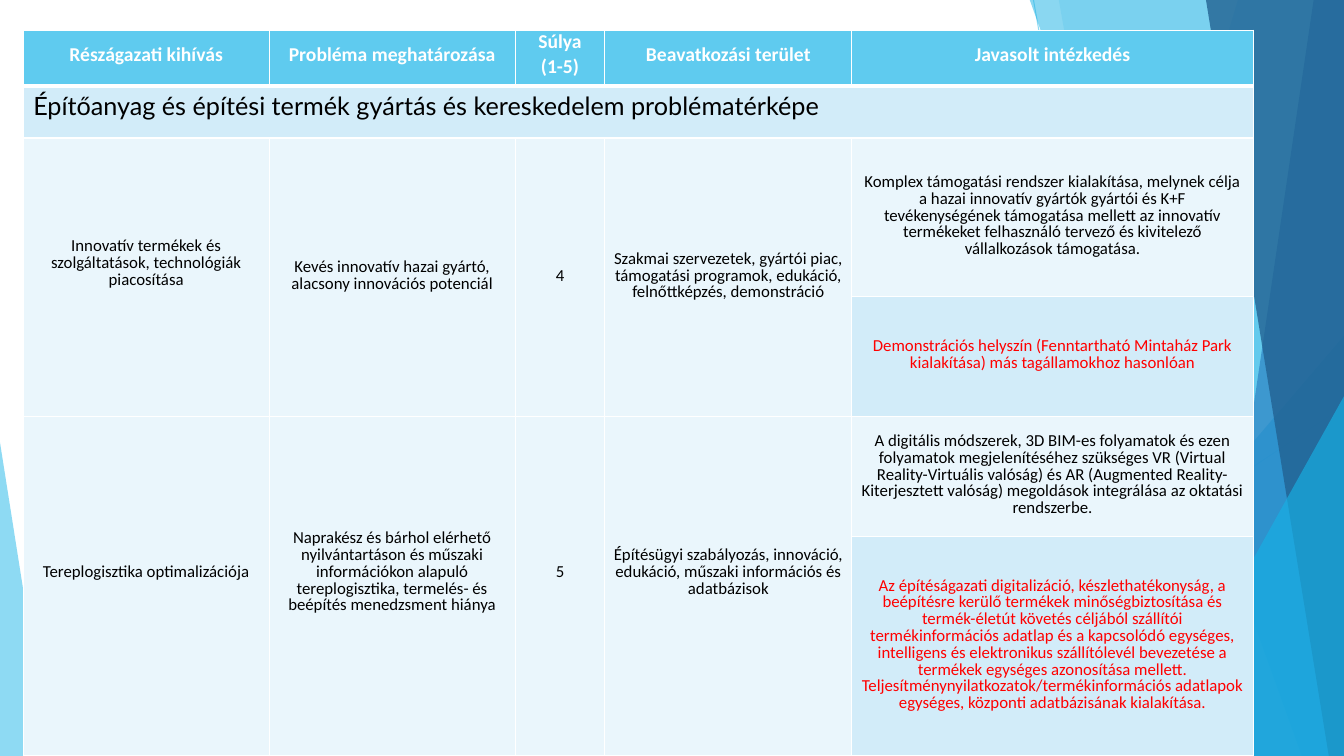
from lxml import etree
from pptx import Presentation
from pptx.dml.color import RGBColor
from pptx.enum.shapes import MSO_CONNECTOR, MSO_SHAPE
from pptx.enum.text import MSO_ANCHOR, PP_ALIGN
from pptx.oxml.ns import qn
from pptx.util import Inches, Pt

STRAIGHT = MSO_CONNECTOR.STRAIGHT
TRIANGLE = MSO_SHAPE.ISOSCELES_TRIANGLE
MIDDLE, CENTER, LEFT = MSO_ANCHOR.MIDDLE, PP_ALIGN.CENTER, PP_ALIGN.LEFT

SKY = RGBColor(0x5F, 0xCB, 0xEF)
CYAN = RGBColor(0x17, 0xB0, 0xE4)
BLUE = RGBColor(0x2E, 0x83, 0xC3)
NAVY = RGBColor(0x22, 0x62, 0x92)
BAND = RGBColor(0xD2, 0xEC, 0xF9)
PALE = RGBColor(0xEA, 0xF6, 0xFC)
WHITE = RGBColor(0xFF, 0xFF, 0xFF)
BLACK = RGBColor(0, 0, 0)
RED = RGBColor(0xFF, 0, 0)

WIDTH, HEIGHT, TOP = 13.33, 7.5, -0.01
COLUMNS = [2.44, 2.44, 0.89, 2.45, 3.98]
ROWS = [0.55, 0.52, 1.57, 1.19, 1.19, 2.18]
LIFT = 0.25  # bottom margin that raises centred text by half a line

HEADERS = [
    ["Részágazati kihívás"],
    ["Probléma meghatározása"],
    ["Súlya", "(1-5)"],
    ["Beavatkozási terület"],
    ["Javasolt intézkedés"],
]
TITLE = "Építőanyag és építési termék gyártás és kereskedelem problématérképe"

# Each challenge: texts and bottom margins of the four merged cells, then two measures
CHALLENGES = [
    (
        [
            "Innovatív termékek és szolgáltatások, technológiák piacosítása",
            "Kevés innovatív hazai gyártó, alacsony innovációs potenciál",
            "4",
            "Szakmai szervezetek, gyártói piac, támogatási programok, edukáció, "
            "felnőttképzés, demonstráció",
        ],
        [LIFT, 0, 0, 0],
        "Komplex támogatási rendszer kialakítása, melynek célja a hazai innovatív gyártók "
        "gyártói és K+F tevékenységének támogatása mellett az innovatív termékeket "
        "felhasználó tervező és kivitelező vállalkozások támogatása.",
        "Demonstrációs helyszín (Fenntartható Mintaház Park kialakítása) más "
        "tagállamokhoz hasonlóan",
    ),
    (
        [
            "Tereplogisztika optimalizációja",
            "Naprakész és bárhol elérhető nyilvántartáson és műszaki információkon alapuló "
            "tereplogisztika, termelés- és beépítés menedzsment hiánya",
            "5",
            "Építésügyi szabályozás, innováció, edukáció, műszaki információs és adatbázisok",
        ],
        [LIFT] * 4,
        "A digitális módszerek, 3D BIM-es folyamatok és ezen folyamatok megjelenítéséhez "
        "szükséges VR (Virtual Reality-Virtuális valóság) és AR (Augmented "
        "Reality-Kiterjesztett valóság) megoldások integrálása az oktatási rendszerbe.",
        "Az építéságazati digitalizáció, készlethatékonyság, a beépítésre kerülő termékek "
        "minőségbiztosítása és termék-életút követés céljából szállítói "
        "termékinformációs adatlap és a kapcsolódó egységes, intelligens és elektronikus "
        "szállítólevél bevezetése a termékek egységes azonosítása mellett. "
        "Teljesítménynyilatkozatok/termékinformációs adatlapok egységes, központi "
        "adatbázisának kialakítása.",
    ),
]


class SlideBuilder:
    def __init__(self, slide, font):
        self.shapes = slide.shapes
        self.font = font

    def set_alpha(self, element, percent):
        color = element.find(".//" + qn("a:srgbClr"))
        etree.SubElement(color, qn("a:alpha"), val=str(percent * 1000))

    def paint(self, shape, color, opacity):
        shape.shadow.inherit = False
        shape.fill.solid()
        shape.fill.fore_color.rgb = color
        shape.line.fill.background()
        self.set_alpha(shape._element.spPr, opacity)

    def line(self, x1, y1, x2, y2, color, opacity):
        line = self.shapes.add_connector(
            STRAIGHT, Inches(x1), Inches(y1), Inches(x2), Inches(y2))
        line.line.color.rgb = color
        line.line.width = Pt(0.75)
        properties = line._element.spPr
        self.set_alpha(properties, opacity)
        etree.SubElement(properties, qn("a:effectLst"))

    def shard(self, top_x, bottom_x, color, opacity):
        """Fill everything from a slanted edge to the right side of the slide."""
        corners = [(WIDTH, TOP), (WIDTH, HEIGHT), (bottom_x, HEIGHT)]
        outline = self.shapes.build_freeform(Inches(top_x), Inches(TOP), scale=1.0)
        outline.add_line_segments([(Inches(x), Inches(y)) for x, y in corners], close=True)
        self.paint(outline.convert_to_shape(), color, opacity)

    def triangle(self, left, top, width, apex, color, opacity):
        shape = self.shapes.add_shape(
            TRIANGLE, Inches(left), Inches(top), Inches(width), Inches(HEIGHT - top))
        shape.adjustments[0] = apex
        self.paint(shape, color, opacity)

    def table(self, left, top, columns, rows):
        table = self.shapes.add_table(
            len(rows), len(columns), Inches(left), Inches(top),
            Inches(sum(columns)), Inches(sum(rows))).table
        table.first_row = table.horz_banding = False
        for column, width in zip(table.columns, columns):
            column.width = Inches(width)
        for row, height in zip(table.rows, rows):
            row.height = Inches(height)
        return table

    def style_cell(self, cell, fill, bottom_border=1):
        cell.fill.solid()
        cell.fill.fore_color.rgb = fill
        properties = cell._tc.get_or_add_tcPr()
        borders = [("a:lnL", 1), ("a:lnR", 1), ("a:lnT", 1), ("a:lnB", bottom_border)]
        for position, (tag, points) in enumerate(borders):
            border = etree.Element(qn(tag), w=str(Pt(points)))
            solid = etree.SubElement(border, qn("a:solidFill"))
            etree.SubElement(solid, qn("a:srgbClr"), val=str(WHITE))
            properties.insert(position, border)

    def add_span(self, para, text, size, color, bold=False, font=None):
        span = para.add_run()
        span.text = text
        span.font.size = Pt(size)
        span.font.name = font or self.font
        span.font.bold = bold
        span.font.color.rgb = color

    def centred_cell(self, cell, lines, size, color, bold=False, bottom=0):
        cell.vertical_anchor = MIDDLE
        cell.margin_left = cell.margin_right = Inches(0.07)
        cell.margin_top, cell.margin_bottom = 0, Inches(bottom)
        frame = cell.text_frame
        for index, text in enumerate(lines):
            para = frame.add_paragraph() if index else frame.paragraphs[0]
            para.alignment = CENTER
            para.line_spacing = Pt(12)
            para.space_before = para.space_after = Pt(3)
            self.add_span(para, text, size, color, bold)


def main():
    deck = Presentation()
    deck.slide_width, deck.slide_height = Inches(WIDTH), Inches(HEIGHT)
    page = SlideBuilder(deck.slides.add_slide(deck.slide_layouts[6]), "Calibri")

    # Background facets
    page.line(10.25, 0, 11.58, HEIGHT, SKY, 70)
    page.line(WIDTH, 4.03, 8.12, HEIGHT, SKY, 70)
    page.shard(12.28, 10.04, SKY, 36)
    page.shard(10.5, 11.83, SKY, 20)
    page.triangle(9.77, 3.33, 3.56, 1, CYAN, 66)
    page.shard(10.21, 12.91, CYAN, 50)
    page.shard(13.03, 11.92, BLUE, 70)
    page.shard(11.96, 13.18, NAVY, 80)
    page.triangle(11.34, 3.93, 1.99, 1, CYAN, 66)
    page.triangle(0, 4.39, 0.49, 0, SKY, 70)

    # Table grid and fills
    table = page.table(0.23, 0.3, COLUMNS, ROWS)
    last = len(COLUMNS) - 1
    for row in range(len(ROWS)):
        for column in range(len(COLUMNS)):
            banded = row == 1 or (column == last and row % 2)
            fill = SKY if row == 0 else BAND if banded else PALE
            page.style_cell(table.cell(row, column), fill, 3 if row == 0 else 1)

    # Header and title rows
    for column, lines in enumerate(HEADERS):
        page.centred_cell(table.cell(0, column), lines, 14, WHITE, bold=True)
    title = table.cell(1, 0)
    title.merge(table.cell(1, last))
    para = title.text_frame.paragraphs[0]
    para.alignment = LEFT
    page.add_span(para, TITLE, 18, BLACK, font="Lato")

    # Challenges, two rows each
    for index, (texts, bottoms, measure, proposal) in enumerate(CHALLENGES):
        row = 2 + 2 * index
        for column, (text, bottom) in enumerate(zip(texts, bottoms)):
            cell = table.cell(row, column)
            cell.merge(table.cell(row + 1, column))
            page.centred_cell(cell, [text], 12, BLACK, bottom=bottom)
        page.centred_cell(table.cell(row, last), [measure], 12, BLACK)
        page.centred_cell(table.cell(row + 1, last), [proposal], 12, RED)

    deck.save("out.pptx")


if __name__ == "__main__":
    main()
